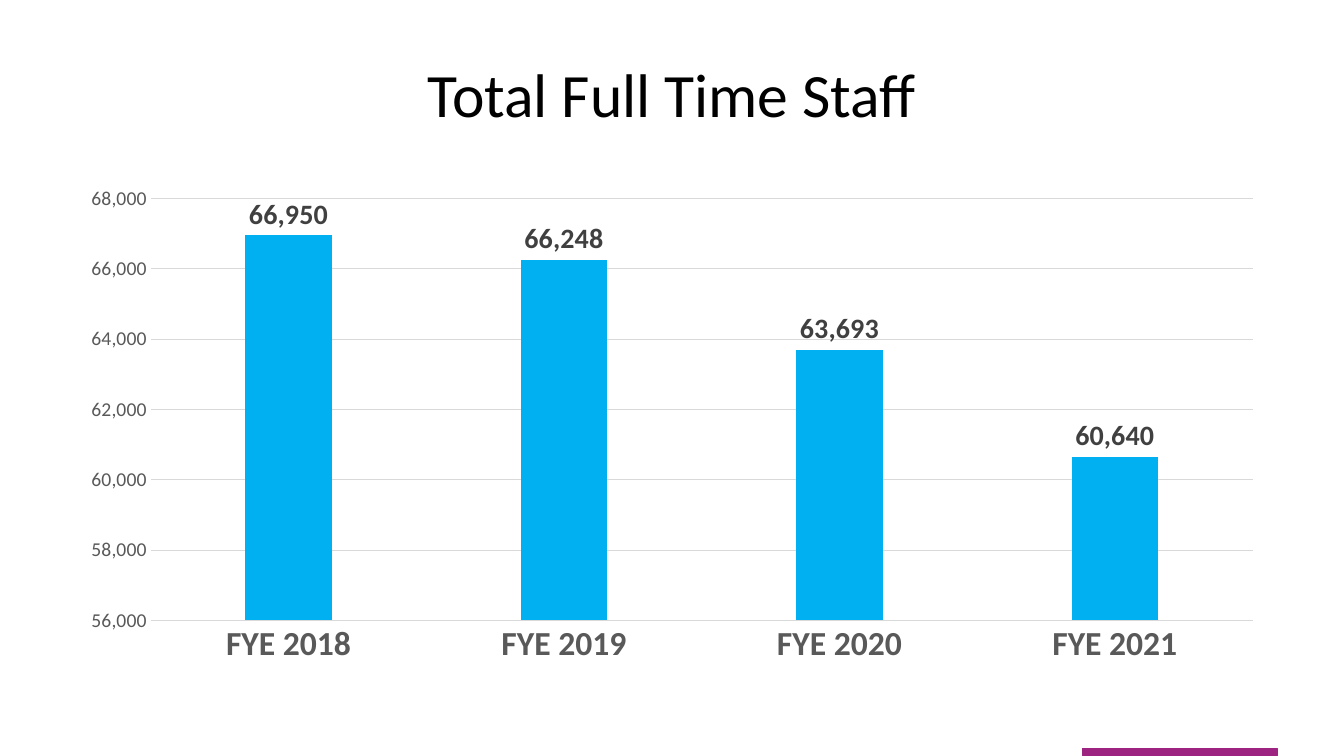
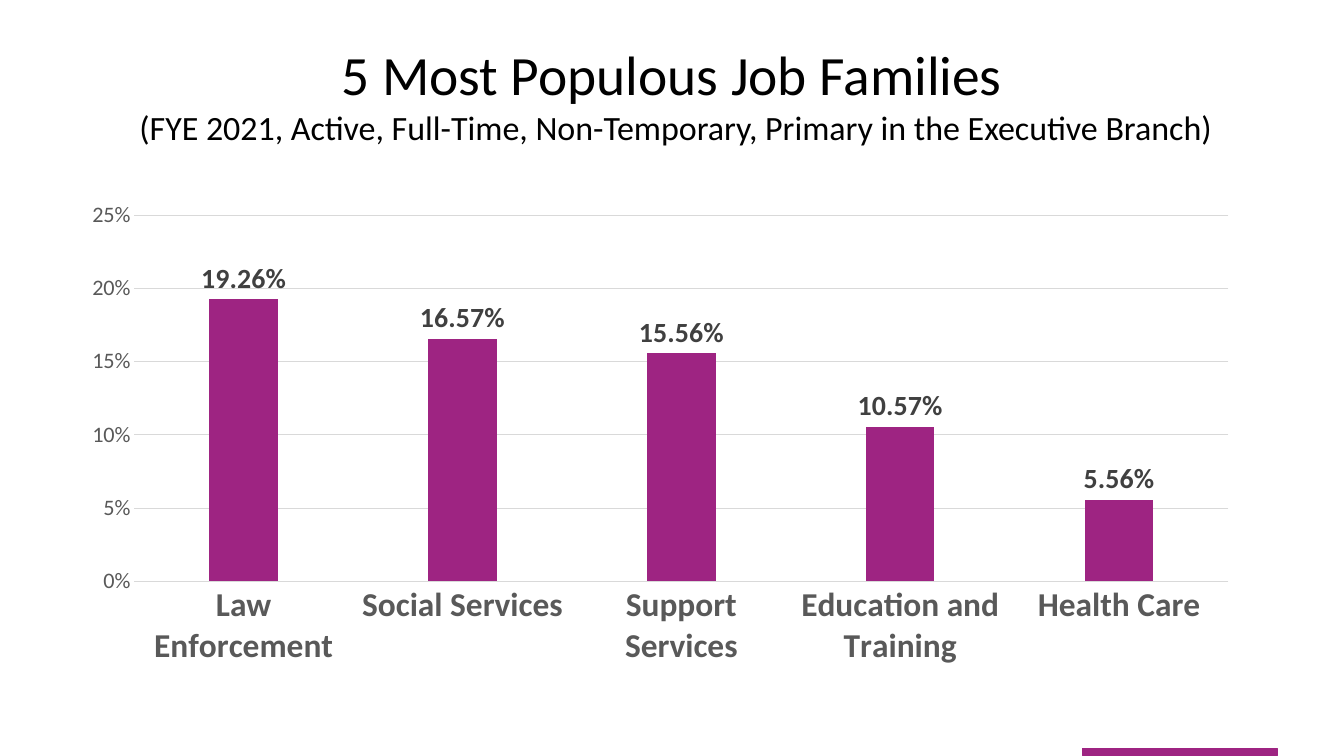
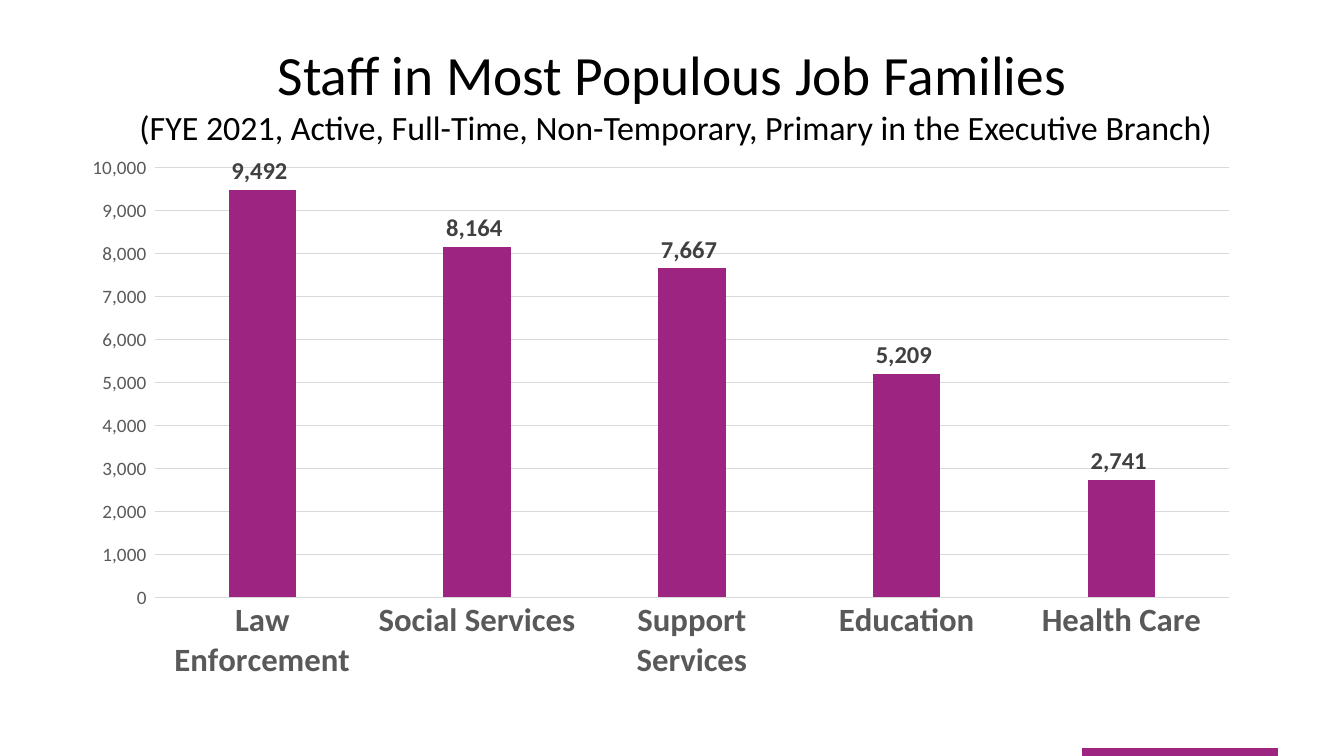
from dataclasses import dataclass

from lxml import etree
from pptx import Presentation
from pptx import util as u
from pptx.chart import data as chart_data
from pptx.dml import color
from pptx.enum import chart as chart_enum
from pptx.enum import shapes, text

FONT = "Calibri"
BLACK, WHITE, PLUM, BLUE = "000000", "FFFFFF", "9E2482", "00B0F0"
AXIS_TEXT, LABEL_TEXT, GRID = "595959", "404040", "D9D9D9"
TITLE_BOX = (48, 21.6, 864, 90)
BAND_BOX = (773.3, 535, 139, 5)
SCOPE = " (FYE 2021, Active, Full-Time, Non-Temporary, Primary in the Executive Branch)"
SIGNED = r"#,##0_);[Red]\(#,##0\)"


@dataclass
class ColumnChart:
    """Content and look of one column chart."""

    box: tuple
    names: tuple
    values: tuple
    fill: str
    scale: tuple
    axis_format: str
    label_format: str
    axis_size: int = 14
    label_size: int = 20
    plot: tuple = ()


def rgb(value):
    """Turn a hex string into a colour."""
    return color.RGBColor.from_string(value)


def points(box):
    """Turn a box in points into lengths."""
    return [u.Pt(length) for length in box]


def style_font(font, size, shade, bold=False):
    """Set typeface, size, colour and weight."""
    font.name, font.size, font.bold = FONT, u.Pt(size), bold
    font.color.rgb = rgb(shade)


def style_line(line, shade):
    """Draw a thin line in one colour."""
    line.color.rgb = rgb(shade)
    line.width = u.Pt(0.75)


def set_up_layout(deck):
    """Give the title-only layout its background and title box."""
    layout = deck.slide_layouts.get_by_name("Title Only")
    layout.background.fill.solid()
    layout.background.fill.fore_color.rgb = rgb(WHITE)
    title = layout.placeholders[0]
    title.left, title.top, title.width, title.height = points(TITLE_BOX)
    title.text_frame.vertical_anchor = text.MSO_ANCHOR.MIDDLE
    return layout


def add_band(page, box):
    """Draw the accent band at the foot of a page."""
    band = page.shapes.add_shape(shapes.MSO_SHAPE.RECTANGLE, *points(box))
    band.shadow.inherit = False
    band.fill.solid()
    band.fill.fore_color.rgb = rgb(PLUM)
    style_line(band.line, PLUM)


def add_title(page, lines):
    """Fill the title with one run for each line of text and size."""
    para = page.shapes.title.text_frame.paragraphs[0]
    para.alignment = text.PP_ALIGN.CENTER
    for index, (words, size) in enumerate(lines):
        if index:
            para.add_line_break()
        span = para.add_run()
        span.text = words
        style_font(span.font, size, BLACK)


def place_plot(chart, plot):
    """Fix the inner plot area as fractions of the chart."""
    area = chart.element.xpath("c:chart/c:plotArea")[0]
    for old in area.xpath("c:layout"):
        area.remove(old)
    namespace = "{%s}" % area.nsmap["c"]
    layout = etree.Element(namespace + "layout")
    manual = etree.SubElement(layout, namespace + "manualLayout")
    settings = [("layoutTarget", "inner"), ("xMode", "edge"), ("yMode", "edge")]
    settings += zip("xywh", plot)
    for tag, value in settings:
        etree.SubElement(manual, namespace + tag).set("val", str(value))
    area.insert(0, layout)


def style_axes(chart, look):
    """Format the category axis, value axis and gridlines."""
    names, values = chart.category_axis, chart.value_axis
    for axis in (names, values):
        axis.major_tick_mark = axis.minor_tick_mark = chart_enum.XL_TICK_MARK.NONE
    style_font(names.tick_labels.font, 24, AXIS_TEXT, True)
    style_line(names.format.line, GRID)
    style_font(values.tick_labels.font, look.axis_size, AXIS_TEXT)
    values.tick_labels.number_format = look.axis_format
    values.tick_labels.number_format_is_linked = False
    values.minimum_scale, values.maximum_scale, values.major_unit = look.scale
    values.format.line.fill.background()
    style_line(values.major_gridlines.format.line, GRID)


def add_columns(page, look):
    """Add a column chart with value labels inside its box."""
    table = chart_data.CategoryChartData(number_format=look.label_format)
    table.categories = look.names
    table.add_series("Series 1", look.values)
    kind = chart_enum.XL_CHART_TYPE.COLUMN_CLUSTERED
    chart = page.shapes.add_chart(kind, *points(look.box), table).chart
    chart.has_title = chart.has_legend = False
    style_font(chart.font, 10, BLACK)
    style_axes(chart, look)
    columns = chart.plots[0]
    columns.gap_width, columns.overlap = 219, -27
    columns.vary_by_categories = False
    series = columns.series[0]
    series.format.fill.solid()
    series.format.fill.fore_color.rgb = rgb(look.fill)
    labels = series.data_labels
    labels.show_value = True
    labels.position = chart_enum.XL_LABEL_POSITION.OUTSIDE_END
    labels.number_format = look.label_format
    labels.number_format_is_linked = False
    style_font(labels.font, look.label_size, LABEL_TEXT, True)
    if look.plot:
        place_plot(chart, look.plot)


def add_chart_page(deck, layout, lines, look):
    """Add a page with a band, a title and one chart."""
    page = deck.slides.add_slide(layout)
    add_band(page, BAND_BOX)
    add_title(page, lines)
    add_columns(page, look)


def main():
    """Build the deck and save it."""
    deck = Presentation()
    deck.slide_width, deck.slide_height = u.Pt(960), u.Pt(540)
    layout = set_up_layout(deck)
    total = ColumnChart(
        box=(48, 126, 864, 356.4),
        names=("FYE 2018", "FYE 2019", "FYE 2020", "FYE 2021"),
        values=(66950, 66248, 63693, 60640),
        fill=BLUE, scale=(56000, 68000, 2000),
        axis_format="#,##0", label_format="#,##0")
    shares = ColumnChart(
        box=(66, 144, 828, 342.7),
        names=("Law Enforcement", "Social Services", "Support Services",
               "Education and Training", "Health Care"),
        values=(0.1926, 0.1657, 0.1556, 0.1057, 0.0556),
        fill=PLUM, scale=(0, 0.25, 0.05),
        axis_format="0%", label_format="0.00%", axis_size=16,
        plot=(0.03, 0.02, 0.95, 0.77))
    staff = ColumnChart(
        box=(66, 111.6, 828, 374.4),
        names=("Law Enforcement", "Social Services", "Support Services",
               "Education", "Health Care"),
        values=(9492, 8164, 7667, 5209, 2741),
        fill=PLUM, scale=(0, 10000, 1000),
        axis_format=SIGNED, label_format=SIGNED, label_size=18,
        plot=(0.03, 0.02, 0.95, 0.85))
    add_chart_page(deck, layout, [("Total Full Time Staff", 44)], total)
    for heading, look in (("5 Most Populous Job Families", shares),
                          ("Staff in Most Populous Job Families", staff)):
        add_chart_page(deck, layout, [(heading, 39.6), (SCOPE, 24.3)], look)
    deck.save("out.pptx")


if __name__ == "__main__":
    main()
